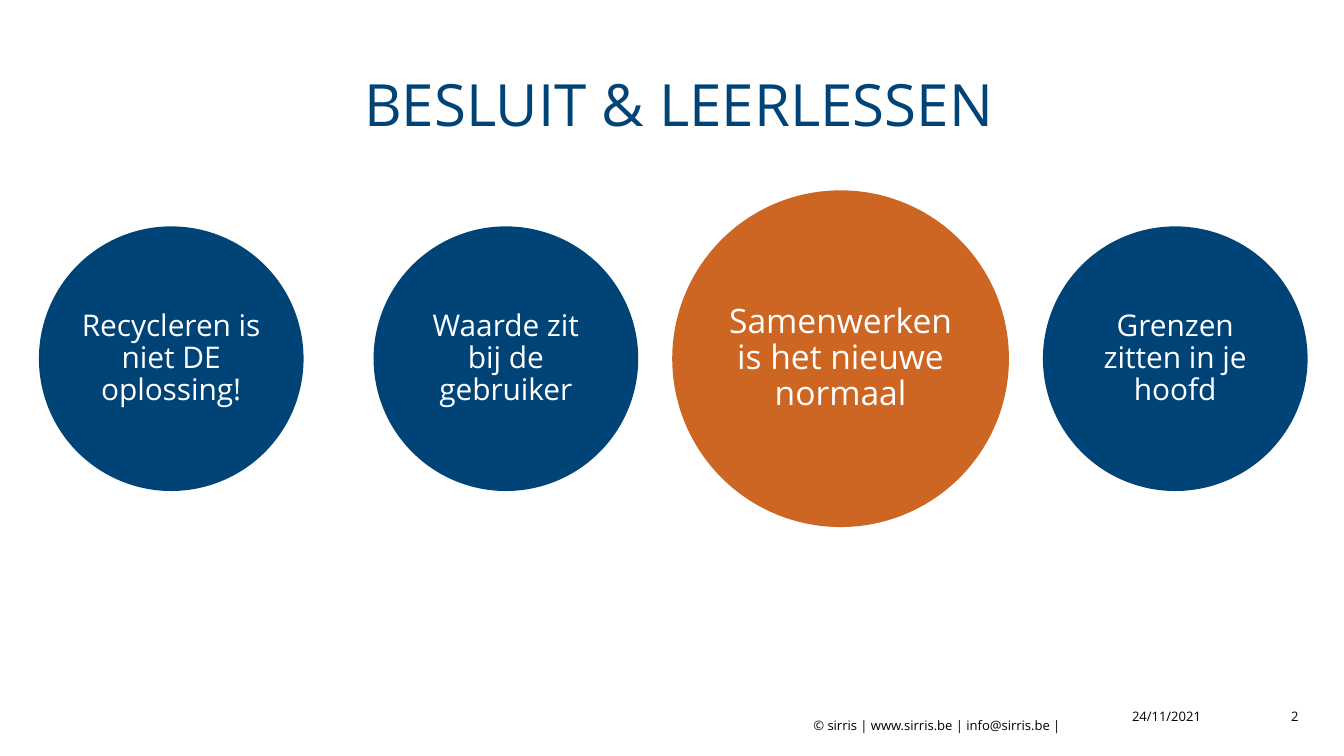
from pptx import Presentation
from pptx.dml.color import RGBColor
from pptx.enum import shapes, text
from pptx.util import Pt

NAVY = RGBColor(0x00, 0x44, 0x77)
ORANGE = RGBColor(0xCC, 0x66, 0x22)
WHITE = RGBColor(0xFF, 0xFF, 0xFF)
BLACK = RGBColor(0x00, 0x00, 0x00)
FONT = "Open Sans"
LEFT, CENTER, RIGHT = text.PP_ALIGN.LEFT, text.PP_ALIGN.CENTER, text.PP_ALIGN.RIGHT

LESSONS = [
    ("Recycleren is niet DE oplossing!", False),
    ("Waarde zit bij de gebruiker", False),
    ("Samenwerken is het nieuwe normaal", True),
    ("Grenzen zitten in je hoofd", False),
]


def write(holder, wording, *, size, color, align=LEFT, left=0, right=0, spacing=None):
    """Put formatted, vertically centred text into a shape."""
    frame = holder.text_frame
    frame.word_wrap = True
    frame.vertical_anchor = text.MSO_ANCHOR.MIDDLE
    frame.margin_left, frame.margin_right = Pt(left), Pt(right)
    frame.margin_top = frame.margin_bottom = Pt(3.6)
    paragraph = frame.paragraphs[0]
    paragraph.alignment = align
    if spacing:
        paragraph.line_spacing = spacing
    run = paragraph.add_run()
    run.text = wording
    run.font.name = FONT
    run.font.size = Pt(size)
    run.font.color.rgb = color


def add_label(slide, box, wording, **style):
    """Add a text box at a box given in points."""
    write(slide.shapes.add_textbox(*map(Pt, box)), wording, **style)


def add_title(slide, box):
    """Place the slide heading."""
    add_label(slide, box, "BESLUIT & LEERLESSEN", size=31.2, color=NAVY, right=7.2)


def add_lessons(slide, box):
    """Centre one circle per lesson in equal columns, with the key lesson larger."""
    left, top, width, height = box
    pitch = width / len(LESSONS)
    for column, (lesson, is_key) in enumerate(LESSONS):
        diameter = height if is_key else 141.8
        x = left + pitch * (column + 0.5) - diameter / 2
        y = top + (height - diameter) / 2
        circle = slide.shapes.add_shape(
            shapes.MSO_SHAPE.OVAL, Pt(x), Pt(y), Pt(diameter), Pt(diameter))
        circle.shadow.inherit = False
        circle.fill.solid()
        circle.fill.fore_color.rgb = ORANGE if is_key else NAVY
        circle.line.fill.background()
        write(circle, lesson, size=18 if is_key else 16, color=WHITE,
              align=CENTER, spacing=0.9)


def add_footer(slide, box):
    """Place the copyright line, date and slide number from left to right."""
    left, top, width, height = box
    copyright_width, date_width = 228.2, 99.4
    date_left = left + copyright_width
    number_left = date_left + date_width
    style = {"size": 7, "color": BLACK}
    add_label(slide, (left, top + 5, copyright_width, height),
              "© sirris | www.sirris.be | info@sirris.be |",
              align=RIGHT, left=7.2, right=7.2, **style)
    add_label(slide, (date_left, top, date_width, height), "24/11/2021",
              align=CENTER, **style)
    add_label(slide, (number_left, top, left + width - number_left, height), "2",
              align=RIGHT, right=8.6, **style)


def main():
    """Build and save the slide."""
    deck = Presentation()
    deck.slide_width, deck.slide_height = Pt(720), Pt(405)
    slide = deck.slides.add_slide(deck.slide_layouts[6])
    add_footer(slide, (347, 375.8, 357.2, 15.8))
    add_lessons(slide, (2.1, 102, 717.2, 180.4))
    add_title(slide, (195.1, 32.4, 412.6, 46))
    deck.save("out.pptx")


if __name__ == "__main__":
    main()
